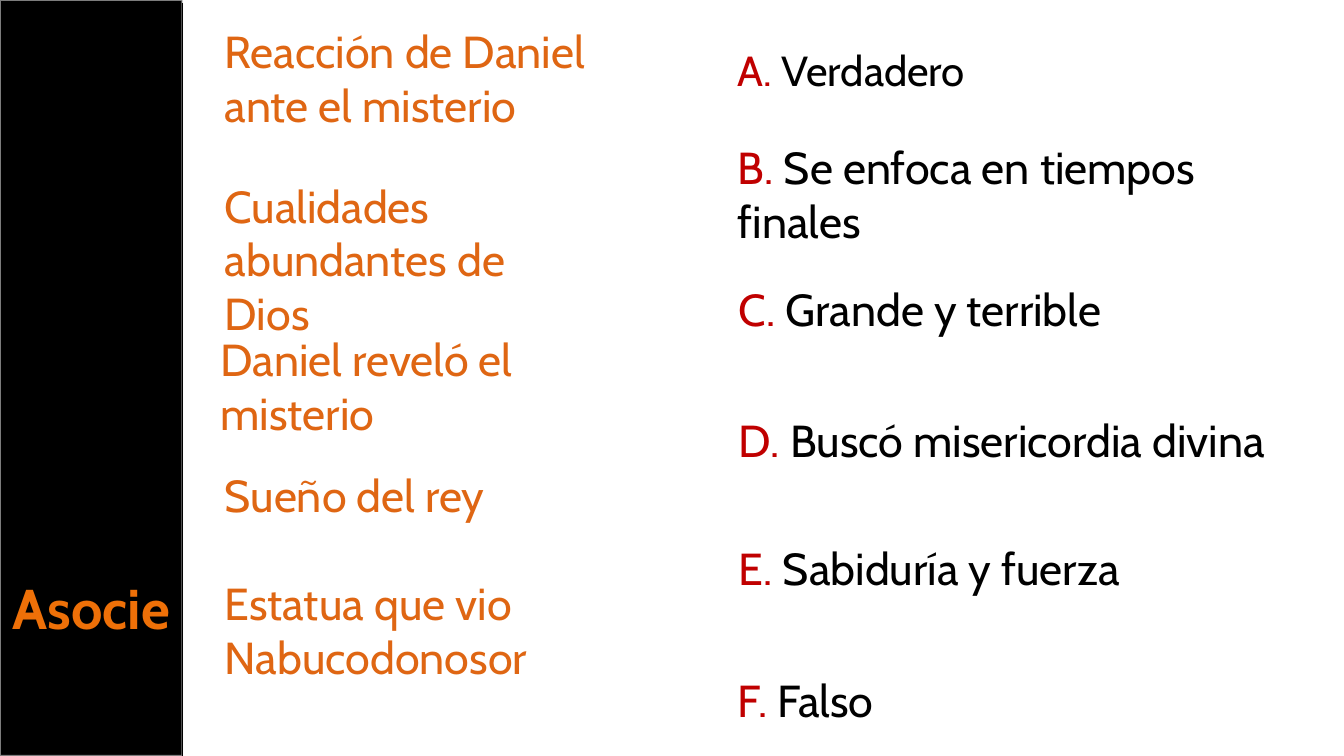
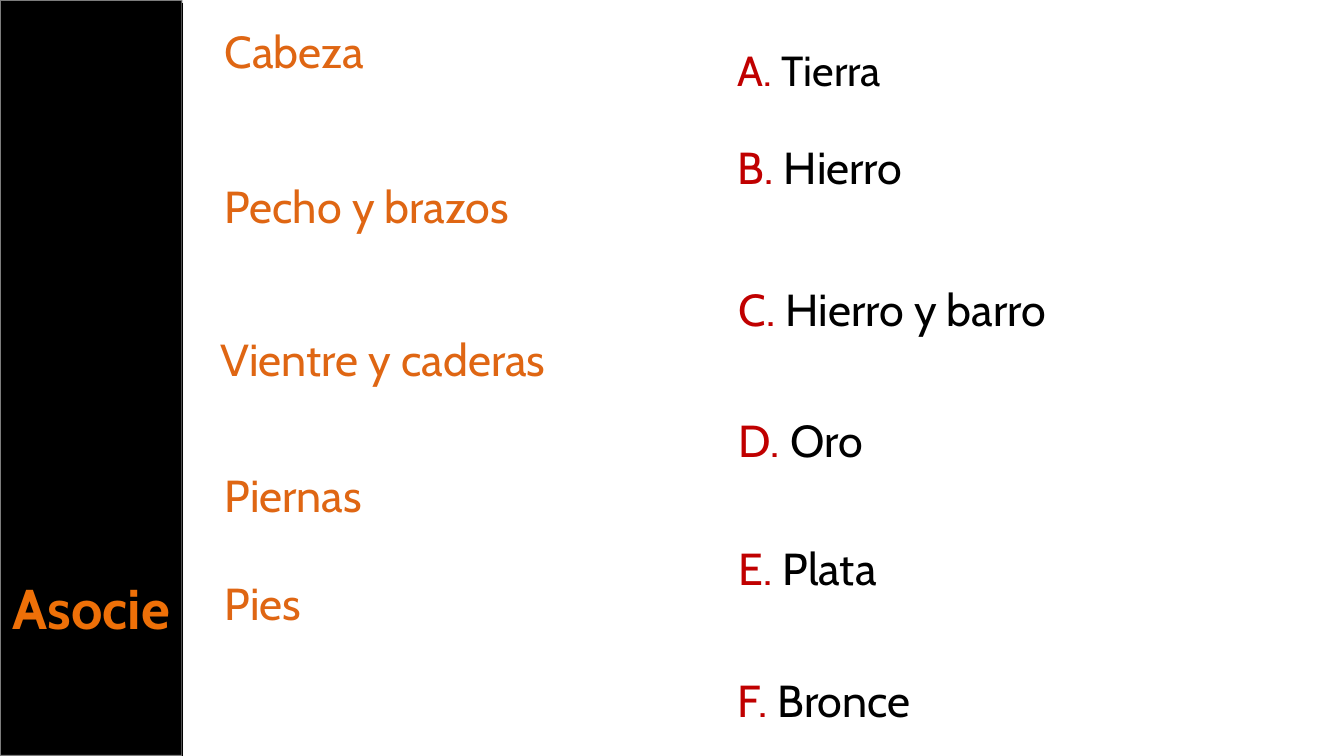
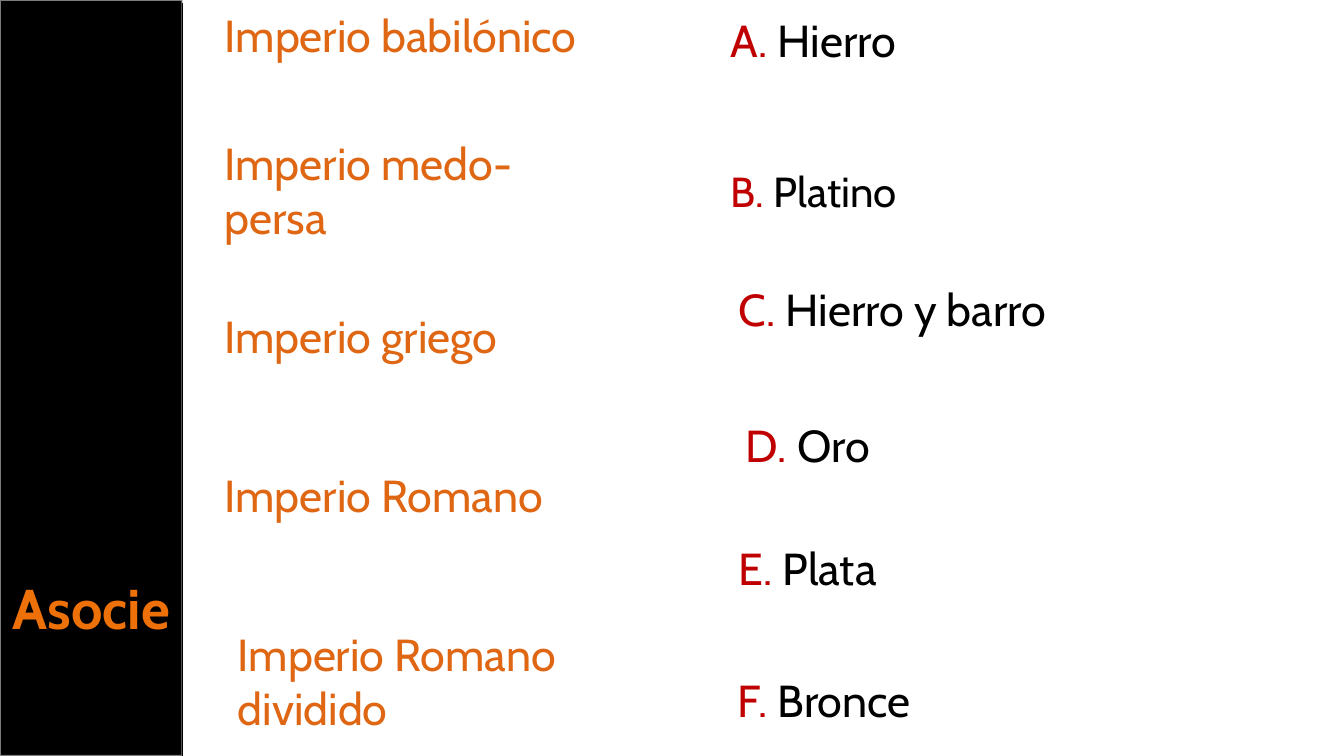
from dataclasses import dataclass

from lxml.etree import SubElement
from pptx import Presentation
from pptx.dml.color import RGBColor
from pptx.enum.shapes import MSO_CONNECTOR, MSO_SHAPE
from pptx.enum.text import MSO_AUTO_SIZE, PP_ALIGN
from pptx.oxml.ns import qn
from pptx.util import Pt

PX = 9144  # 100 px to the inch
SLIDE_WIDTH, SLIDE_HEIGHT = 1333, 750

FONT = "Cabin"
BLACK = RGBColor(0x00, 0x00, 0x00)
BAND_EDGE = RGBColor(0xF9, 0xF9, 0xF9)
TITLE_ORANGE = RGBColor(0xEE, 0x70, 0x08)
CLUE_ORANGE = RGBColor(0xDF, 0x66, 0x13)
LETTER_RED = RGBColor(0xC0, 0x00, 0x00)

# Regions: left, top, width, height
BAND_BOX = (0, 0, 181, SLIDE_HEIGHT)
CLUE_BOX = (213, 0, 459, SLIDE_HEIGHT)
ANSWER_BOX = (722, 0, 559, SLIDE_HEIGHT)


@dataclass
class Spot:
    """Place of one entry, measured from the corner of its region."""
    left: int
    top: int
    width: int
    size: int = 32


CLUE_SPOTS = [Spot(0, 19, 459), Spot(0, 172, 384), Spot(-4, 324, 413),
              Spot(0, 459, 406), Spot(0, 566, 426)]
ANSWER_SPOTS = [Spot(0, 39, 418, 30), Spot(0, 134, 492), Spot(1, 275, 470),
                Spot(1, 405, 551), Spot(1, 532, 453), Spot(0, 662, 559)]

# The empires slide moves some entries
EMPIRE_CLUE_SPOTS = [Spot(0, 3, 459), Spot(0, 130, 384), Spot(0, 301, 413),
                     CLUE_SPOTS[3], Spot(13, 617, 426)]
EMPIRE_ANSWER_SPOTS = [Spot(-7, 8, 478), Spot(-7, 159, 418, 30), ANSWER_SPOTS[2],
                       Spot(8, 409, 551), *ANSWER_SPOTS[4:]]

# Each entry is its text and the number of lines its box holds
EXERCISES = [
    ([("Reacción de Daniel ante el misterio", 2),
      ("Cualidades abundantes de Dios", 2),
      ("Daniel reveló el misterio", 2),
      ("Sueño del rey", 1),
      ("Estatua que vio Nabucodonosor", 2)], CLUE_SPOTS,
     [("Verdadero", 1), ("Se enfoca en tiempos finales", 2),
      ("Grande y terrible", 1), ("Buscó misericordia divina", 1),
      ("Sabiduría y fuerza", 1), ("Falso", 1)], ANSWER_SPOTS),
    ([("Cabeza", 1), ("Pecho y brazos", 1), ("Vientre y caderas", 1),
      ("Piernas", 1), ("Pies", 1)], CLUE_SPOTS,
     [("Tierra", 1), ("Hierro", 1), ("Hierro y barro", 1),
      ("Oro", 1), ("Plata", 1), ("Bronce", 1)], ANSWER_SPOTS),
    ([("Imperio babilónico", 1), ("Imperio medo-persa", 2),
      ("Imperio griego", 1), ("Imperio Romano", 1),
      ("Imperio Romano dividido", 2)], EMPIRE_CLUE_SPOTS,
     [("Hierro", 1), ("Platino", 1), ("Hierro y barro", 1),
      ("Oro", 1), ("Plata", 1), ("Bronce", 1)], EMPIRE_ANSWER_SPOTS),
]


def add_text(slide, left, top, width, size, parts, lines=1, bold=None, align=None):
    """Add a text box; parts are (text, colour) pairs on one paragraph."""
    height = round(lines * size * 1.69) + 10
    box = slide.shapes.add_textbox(left * PX, top * PX, width * PX, height * PX)
    frame = box.text_frame
    frame.word_wrap = True
    frame.auto_size = MSO_AUTO_SIZE.SHAPE_TO_FIT_TEXT
    para = frame.paragraphs[0]
    para.alignment = align
    for text, colour in parts:
        span = para.add_run()
        span.text = text
        span.font.name = FONT
        span.font.size = Pt(size)
        span.font.bold = bold
        span.font.color.rgb = colour


def add_band(slide, box):
    """Black side band with its title and a rule on its right edge."""
    left, top, width, height = box
    band = slide.shapes.add_shape(MSO_SHAPE.RECTANGLE, left * PX, top * PX,
                                  width * PX, height * PX)
    band.shadow.inherit = False
    band.fill.solid()
    band.fill.fore_color.rgb = BLACK
    band.line.color.rgb = BAND_EDGE
    band.line.width = Pt(1.35)
    # Half-transparent outline
    edge_colour = band.line._get_or_add_ln().find(".//" + qn("a:srgbClr"))
    SubElement(edge_colour, qn("a:alpha"), val="50000")

    add_text(slide, left, top + 564, width, 40, [("Asocie", TITLE_ORANGE)],
             bold=True, align=PP_ALIGN.CENTER)

    right = left + width
    rule = slide.shapes.add_connector(MSO_CONNECTOR.STRAIGHT, right * PX, (top + 3) * PX,
                                      right * PX, (top + height) * PX)
    rule.line.color.rgb = BLACK
    rule.line.width = Pt(0.85)
    SubElement(rule._element.spPr, qn("a:effectLst"))


def add_clues(slide, box, clues, spots):
    """Orange clues in the left column."""
    for (text, lines), spot in zip(clues, spots):
        add_text(slide, box[0] + spot.left, box[1] + spot.top, spot.width,
                 spot.size, [(text, CLUE_ORANGE)], lines)


def add_answers(slide, box, answers, spots):
    """Lettered answers in the right column."""
    for letter, (text, lines), spot in zip("ABCDEF", answers, spots):
        add_text(slide, box[0] + spot.left, box[1] + spot.top, spot.width,
                 spot.size, [(f"{letter}. ", LETTER_RED), (text, BLACK)], lines)


def main():
    deck = Presentation()
    deck.slide_width = SLIDE_WIDTH * PX
    deck.slide_height = SLIDE_HEIGHT * PX
    for clues, clue_spots, answers, answer_spots in EXERCISES:
        page = deck.slides.add_slide(deck.slide_layouts[6])
        add_band(page, BAND_BOX)
        add_clues(page, CLUE_BOX, clues, clue_spots)
        add_answers(page, ANSWER_BOX, answers, answer_spots)
    deck.save("out.pptx")


if __name__ == "__main__":
    main()
